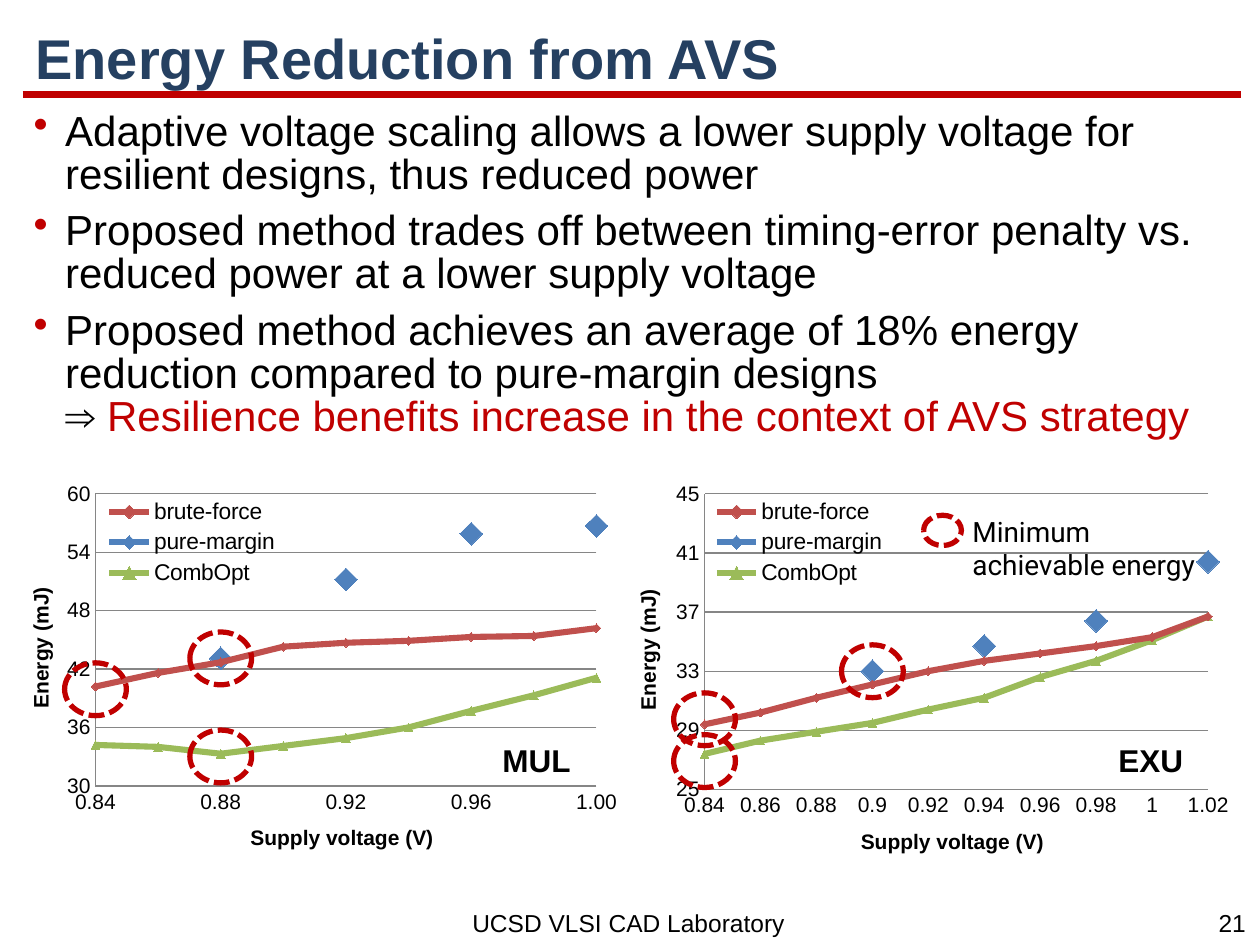
from lxml.etree import SubElement
from pptx import Presentation
from pptx.chart.data import XyChartData
from pptx.dml.color import RGBColor
from pptx.enum.chart import XL_CHART_TYPE as ChartType, XL_LEGEND_POSITION as LegendPosition
from pptx.enum.chart import XL_MARKER_STYLE as Marker, XL_TICK_MARK as TickMark
from pptx.enum.dml import MSO_LINE_DASH_STYLE as Dash
from pptx.enum.shapes import MSO_CONNECTOR as Connector, MSO_SHAPE as Shape
from pptx.enum.text import MSO_ANCHOR as Anchor, PP_ALIGN as Align
from pptx.oxml.ns import qn
from pptx.util import Pt

RED = RGBColor(0xC0, 0x00, 0x00)
NAVY = RGBColor(0x25, 0x40, 0x61)
BLACK = RGBColor(0x00, 0x00, 0x00)
GRAY = RGBColor(0x86, 0x86, 0x86)

TITLE = "Energy Reduction from AVS"
BULLETS = [
    "Adaptive voltage scaling allows a lower supply voltage for resilient designs, thus reduced power",
    "Proposed method trades off between timing-error penalty vs. reduced power at a lower supply voltage",
    "Proposed method achieves an average of 18% energy reduction compared to pure-margin designs",
]
CONCLUSION = "Resilience benefits increase in the context of AVS strategy"

SERIES_STYLES = {
    "brute-force": (RGBColor(0xC0, 0x50, 0x4D), Marker.DIAMOND, 5),
    "pure-margin": (RGBColor(0x4F, 0x81, 0xBD), Marker.DIAMOND, 13),
    "CombOpt": (RGBColor(0x9B, 0xBB, 0x59), Marker.TRIANGLE, 5),
}
CHARTS = [
    dict(
        name="MUL", left=13.7, name_left=280, x_range=(0.84, 1.0, 0.04), x_format="#,##0.00",
        y_range=(30, 60, 6), plot=(0.117, 0.06, 0.82, 0.736), nudges=(1.5, 0, 1.5),
        values=[
            [40.2, 41.6, 42.7, 44.3, 44.7, 44.9, 45.3, 45.4, 46.2],
            [None, None, 43.1, None, 51.2, None, 55.9, None, 56.7],
            [34.2, 34, 33.3, 34.1, 34.9, 36, 37.7, 39.3, 41.1],
        ],
    ),
    dict(
        name="EXU", left=360.7, name_left=632, x_range=(0.84, 1.02, 0.02), x_format="General",
        y_range=(25, 45, 4), plot=(0.12, 0.06, 0.824, 0.745), nudges=(-3, 0, 4),
        values=[
            [29.4, 30.2, 31.2, 32.1, 33, 33.7, 34.2, 34.7, 35.3, 36.7],
            [None, None, None, 33, None, 34.7, None, 36.4, None, 40.4],
            [27.4, 28.3, 28.9, 29.5, 30.4, 31.2, 32.6, 33.7, 35.1, 36.7],
        ],
    ),
]
FIRST_VOLTAGE, VOLTAGE_STEP = 0.84, 0.02
CHART_TOP, CHART_WIDTH, CHART_HEIGHT = 268.6, 349.2, 226.8
LEGEND_LAYOUT = (0.13, 0.06, 0.29, 0.245)
RING_WIDTH, RING_HEIGHT = 35.3, 30.2


def style_font(font, size, color=BLACK, bold=False, name="Arial"):
    font.name, font.size, font.bold = name, Pt(size), bold
    font.color.rgb = color


def add_text(page, text, left, top, width, height, align=Align.LEFT, wrap=True, **style):
    box = page.shapes.add_textbox(Pt(left), Pt(top), Pt(width), Pt(height))
    box.text_frame.word_wrap = wrap
    para = box.text_frame.paragraphs[0]
    para.alignment = align
    span = para.add_run()
    span.text = text
    style_font(span.font, **style)


def add_bullets(page):
    frame = page.shapes.add_textbox(Pt(12.2), Pt(60.5), Pt(695.5), Pt(192.2)).text_frame
    frame.word_wrap = True
    for index, text in enumerate(BULLETS):
        para = frame.paragraphs[0] if index == 0 else frame.add_paragraph()
        para.line_spacing = 0.85
        para.space_before = Pt(8 if index else 0)
        properties = para._p.get_or_add_pPr()
        properties.set("marL", str(Pt(18)))
        properties.set("indent", str(-Pt(18)))
        color = SubElement(properties, qn("a:buClr"))
        SubElement(color, qn("a:srgbClr"), val=str(RED))
        SubElement(properties, qn("a:buChar"), char="•")
        span = para.add_run()
        span.text = text
        style_font(span.font, 24)
    para.add_line_break()
    for text, color, bold in (("⇒ ", BLACK, True), (CONCLUSION, RED, False)):
        span = para.add_run()
        span.text = text
        style_font(span.font, 24, color, bold)


def set_layout(element, position, fractions, inner=False):
    for old in element.findall(qn("c:layout")):
        element.remove(old)
    layout = element.makeelement(qn("c:layout"), {})
    element.insert(position, layout)
    manual = SubElement(layout, qn("c:manualLayout"))
    if inner:
        SubElement(manual, qn("c:layoutTarget"), val="inner")
    for key in ("xMode", "yMode"):
        SubElement(manual, qn(f"c:{key}"), val="edge")
    for key, value in zip("xywh", fractions):
        SubElement(manual, qn(f"c:{key}"), val=str(value))


def style_axis(axis, title, limits, number_format):
    axis.minimum_scale, axis.maximum_scale, axis.major_unit = limits
    axis.major_tick_mark = axis.minor_tick_mark = TickMark.NONE
    axis.tick_labels.number_format = number_format
    axis.tick_labels.number_format_is_linked = False
    axis.format.line.color.rgb = GRAY
    axis.axis_title.text_frame.text = title
    style_font(axis.axis_title.text_frame.paragraphs[0].runs[0].font, 12, bold=True)


def add_energy_chart(page, info):
    data = XyChartData()
    for name, values in zip(SERIES_STYLES, info["values"]):
        series = data.add_series(name)
        for index, value in enumerate(values):
            series.add_data_point(round(FIRST_VOLTAGE + index * VOLTAGE_STEP, 2), value)
    chart = page.shapes.add_chart(
        ChartType.XY_SCATTER_SMOOTH, Pt(info["left"]), Pt(CHART_TOP),
        Pt(CHART_WIDTH), Pt(CHART_HEIGHT), data).chart
    style_font(chart.font, 12)
    chart.has_title = False
    chart.has_legend = True
    chart.legend.position = LegendPosition.RIGHT
    chart.legend.include_in_layout = False
    style_font(chart.legend.font, 13)
    set_layout(chart.legend._element, 1, LEGEND_LAYOUT)
    set_layout(chart._chartSpace.chart.plotArea, 0, info["plot"], inner=True)
    style_axis(chart.category_axis, "Supply voltage (V)", info["x_range"], info["x_format"])
    style_axis(chart.value_axis, "Energy (mJ)", info["y_range"], "General")
    chart.category_axis.has_major_gridlines = False
    chart.value_axis.has_major_gridlines = True
    chart.value_axis.major_gridlines.format.line.color.rgb = GRAY
    chart.plots[0].vary_by_categories = False
    for series, (color, marker, size) in zip(chart.plots[0].series, SERIES_STYLES.values()):
        series.smooth = True
        series.format.line.color.rgb = color
        series.format.line.width = Pt(3.5)
        series.marker.style, series.marker.size = marker, size
        series.marker.format.fill.solid()
        series.marker.format.fill.fore_color.rgb = color
        series.marker.format.line.color.rgb = color
        for point in list(series._element.iter(qn("c:pt"))):
            if point.findtext(qn("c:v")) in ("None", "", None):
                point.getparent().remove(point)


def add_ring(page, center_x, center_y, width=RING_WIDTH, height=RING_HEIGHT):
    ring = page.shapes.add_shape(
        Shape.OVAL, Pt(center_x - width / 2), Pt(center_y - height / 2), Pt(width), Pt(height))
    ring.shadow.inherit = False
    ring.fill.background()
    ring.line.color.rgb = RED
    ring.line.width = Pt(3)
    ring.line.dash_style = Dash.SQUARE_DOT


def add_minimum_rings(page, info):
    x, y, width, height = info["plot"]
    x_low, x_high, _ = info["x_range"]
    y_low, y_high, _ = info["y_range"]
    for values, nudge in zip(info["values"], info["nudges"]):
        lowest = min(value for value in values if value is not None)
        x_share = values.index(lowest) * VOLTAGE_STEP / (x_high - x_low)
        y_share = (y_high - lowest) / (y_high - y_low)
        add_ring(page, info["left"] + CHART_WIDTH * (x + width * x_share),
                 CHART_TOP + CHART_HEIGHT * (y + height * y_share) + nudge)


def main():
    deck = Presentation()
    deck.slide_width, deck.slide_height = Pt(720), Pt(540)
    page = deck.slides.add_slide(deck.slide_layouts[5])

    rule = page.shapes.add_connector(Connector.STRAIGHT, Pt(13), Pt(54), Pt(709.2), Pt(54))
    rule.line.color.rgb = RED
    rule.line.width = Pt(4.5)
    SubElement(rule._element.spPr, qn("a:effectLst"))

    title = page.shapes.title
    title.left, title.top, title.width, title.height = Pt(13), Pt(11.5), Pt(697), Pt(46.8)
    title.text_frame.text = TITLE
    title.text_frame.vertical_anchor = Anchor.MIDDLE
    para = title.text_frame.paragraphs[0]
    para.alignment = Align.LEFT
    para.line_spacing = 0.9
    style_font(para.runs[0].font, 32, NAVY, bold=True)

    add_bullets(page)
    for info in CHARTS:
        add_energy_chart(page, info)
    for info in CHARTS:
        add_text(page, info["name"], info["name_left"], 419.8, 57.6, 28.8, size=18, bold=True)
        add_minimum_rings(page, info)
    add_ring(page, 538.6, 303.1, 21.6, 17.3)
    add_text(page, "Minimum achievable energy", 548.6, 290.2, 157.7, 46, size=16, name="Roboto")
    for text, left, width in (("UCSD VLSI CAD Laboratory ", 260, 202.3), ("21", 688.3, 31.7)):
        add_text(page, text, left, 515.5, width, 24.5, Align.CENTER, wrap=False, size=14)

    deck.save("out.pptx")


if __name__ == "__main__":
    main()
